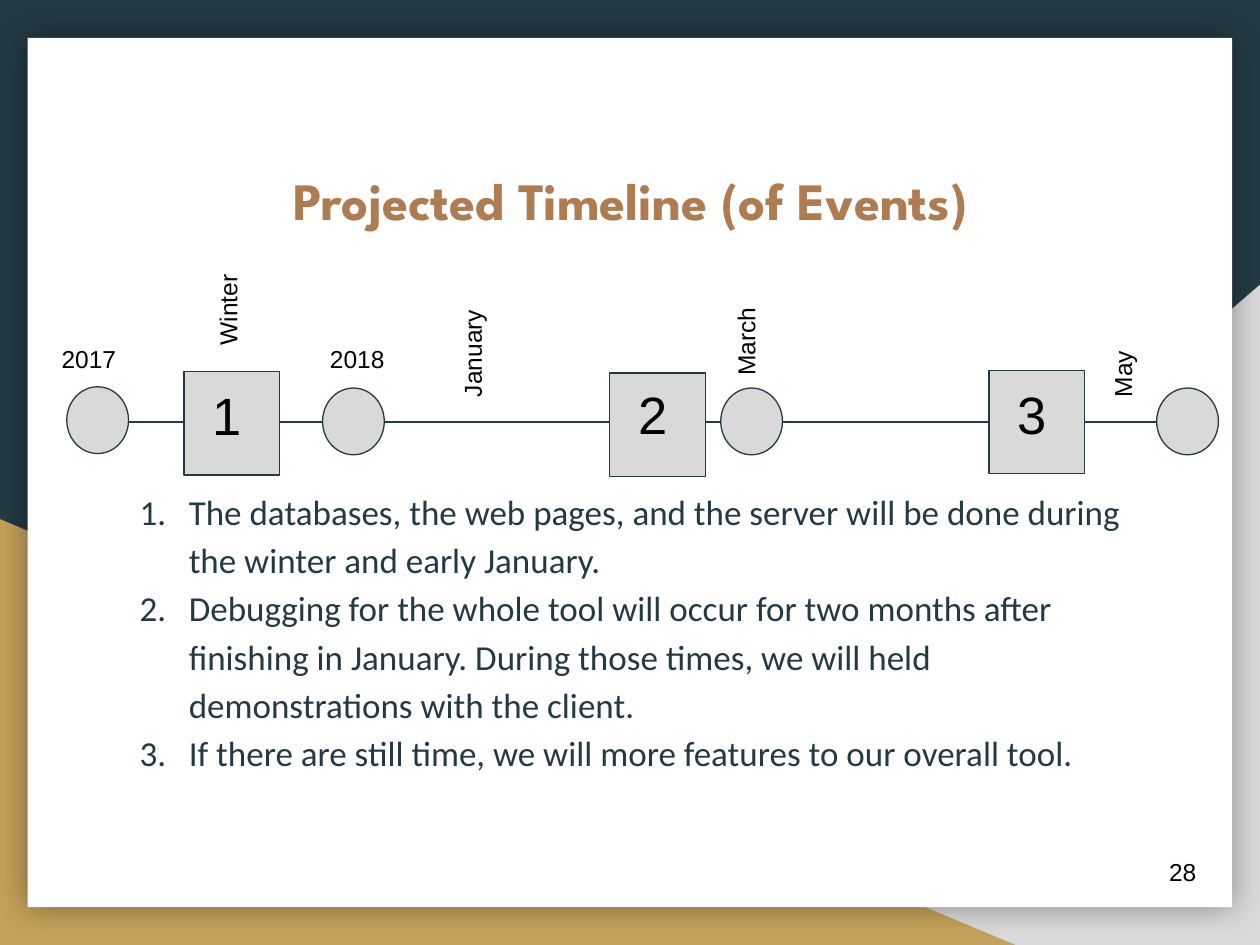
from dataclasses import dataclass

from lxml.etree import SubElement
from pptx import Presentation
from pptx.dml.color import RGBColor
from pptx.enum.shapes import MSO_CONNECTOR, MSO_SHAPE
from pptx.enum.text import MSO_ANCHOR, PP_ALIGN
from pptx.oxml.ns import qn
from pptx.shapes.autoshape import Shape
from pptx.util import Inches, Pt

NAVY, GOLD, GREY = "233A44", "C4A15A", "D9D9D9"
BROWN, WHITE, BLACK = "AF7B51", "FFFFFF", "000000"


@dataclass
class Box:
    left: float
    top: float
    width: float
    height: float

    def lengths(self) -> list[int]:
        return [Inches(side) for side in (self.left, self.top, self.width, self.height)]


@dataclass
class Label:
    text: str
    box: Box
    rotation: int = 0


@dataclass
class Milestone:
    number: str
    left: float
    top: float
    number_top: float


CIRCLES = [(0.53, 3.07), (2.56, 3.08), (5.72, 3.08), (9.18, 3.08)]
MILESTONES = [
    Milestone("1", 1.46, 2.95, 2.94),
    Milestone("2", 4.84, 2.96, 2.93),
    Milestone("3", 7.85, 2.94, 2.93),
]
LABELS = [
    Label("2017", Box(0.39, 2.63, 0.76, 0.43)),
    Label("2018", Box(2.52, 2.63, 0.76, 0.43)),
    Label("Winter", Box(1.23, 2.08, 1.12, 0.4), 270),
    Label("January", Box(3.17, 2.49, 1.12, 0.4), 270),
    Label("March", Box(5.34, 2.32, 1.12, 0.4), 270),
    Label("May", Box(8.33, 2.49, 1.12, 0.4), 270),
]
STEPS = [
    "The databases, the web pages, and the server will be done during the winter "
    "and early January.",
    "Debugging for the whole tool will occur for two months after finishing in January. "
    "During those times, we will held demonstrations with the client.",
    "If there are still time, we will more features to our overall tool.",
]


def color(value: str) -> RGBColor:
    return RGBColor.from_string(value)


def add_filled(shapes, kind: MSO_SHAPE, box: Box, fill: str, outline: str = "") -> Shape:
    shape = shapes.add_shape(kind, *box.lengths())
    shape.shadow.inherit = False
    shape.fill.solid()
    shape.fill.fore_color.rgb = color(fill)
    if outline:
        shape.line.color.rgb = color(outline)
        shape.line.width = Pt(0.75)
    else:
        shape.line.fill.background()
    return shape


def add_text(shapes, paragraphs: list[str], box: Box, size: float, font: str = "Arial",
             fill: str = BLACK) -> Shape:
    text_box = shapes.add_textbox(*box.lengths())
    frame = text_box.text_frame
    frame.word_wrap = True
    frame.margin_left = frame.margin_right = Inches(0.1)
    frame.margin_top = frame.margin_bottom = Inches(0.1)
    frame.text = "\n".join(paragraphs)
    for paragraph in frame.paragraphs:
        paragraph.font.size = Pt(size)
        paragraph.font.name = font
        paragraph.font.color.rgb = color(fill)
    return text_box


def add_glow(shape: Shape) -> None:
    """Give the shape a soft black shadow on all sides."""
    effects = shape._element.spPr.find(qn("a:effectLst"))
    shadow = SubElement(effects, qn("a:outerShdw"), blurRad=str(Pt(18)), dist="0",
                        dir="0", algn="ctr", rotWithShape="0")
    tint = SubElement(shadow, qn("a:srgbClr"), val=BLACK)
    SubElement(tint, qn("a:alpha"), val="40000")


def add_backdrop(slide) -> None:
    slide.background.fill.solid()
    slide.background.fill.fore_color.rgb = color(NAVY)
    right_corner = add_filled(slide.shapes, MSO_SHAPE.RIGHT_TRIANGLE,
                              Box(3.92, 2.26, 6.08, 5.24), GREY)
    right_corner._element.spPr.find(qn("a:xfrm")).set("flipH", "1")
    add_filled(slide.shapes, MSO_SHAPE.RIGHT_TRIANGLE, Box(0, 4.12, 8.06, 3.38), GOLD)
    add_glow(add_filled(slide.shapes, MSO_SHAPE.RECTANGLE, Box(0.22, 0.3, 9.56, 6.9), WHITE))


def add_steps(slide) -> None:
    text_box = add_text(slide.shapes, STEPS, Box(0.9, 3.74, 8.21, 2.31), 20, "Calibri", NAVY)
    paragraphs = text_box.text_frame.paragraphs
    for paragraph in paragraphs:
        paragraph.line_spacing = 1.15
    paragraphs[-1].space_after = Pt(16)
    for paragraph in paragraphs:
        properties = paragraph._p.get_or_add_pPr()
        properties.set("marL", str(Inches(0.5)))
        properties.set("indent", str(Inches(-0.39)))
        number = properties.makeelement(qn("a:buAutoNum"), {"type": "arabicPeriod"})
        bullet_color = properties.makeelement(qn("a:buClr"), {})
        SubElement(bullet_color, qn("a:srgbClr"), val=NAVY)
        defaults = properties.find(qn("a:defRPr"))
        defaults.addprevious(bullet_color)
        defaults.addprevious(number)


def add_timeline(slide) -> None:
    shapes = slide.shapes.add_group_shape().shapes
    axis = shapes.add_connector(MSO_CONNECTOR.STRAIGHT, Inches(0.69), Inches(3.35),
                                Inches(9.47), Inches(3.35))
    axis.line.color.rgb = color(NAVY)
    axis.line.width = Pt(0.75)
    SubElement(axis._element.spPr, qn("a:effectLst"))
    for left, top in CIRCLES:
        add_filled(shapes, MSO_SHAPE.OVAL, Box(left, top, 0.49, 0.53), GREY, NAVY)
    for label in LABELS:
        add_text(shapes, [label.text], label.box, 14).rotation = label.rotation
    for milestone in MILESTONES:
        add_filled(shapes, MSO_SHAPE.RECTANGLE,
                   Box(milestone.left, milestone.top, 0.76, 0.82), GREY, NAVY)
        add_text(shapes, [milestone.number],
                 Box(milestone.left + 0.13, milestone.number_top, 0.49, 0.82), 30)


def main() -> None:
    presentation = Presentation()
    presentation.slide_width = Inches(10)
    presentation.slide_height = Inches(7.5)
    slide = presentation.slides.add_slide(presentation.slide_layouts[6])
    add_backdrop(slide)
    add_steps(slide)
    title = add_text(slide.shapes, ["Projected Timeline (of Events)"],
                     Box(0.9, 1.23, 8.21, 1.39), 30, "League Spartan", BROWN)
    heading = title.text_frame.paragraphs[0]
    heading.alignment = PP_ALIGN.CENTER
    heading.font.bold = True
    page_number = add_text(slide.shapes, ["28"], Box(9.18, 6.63, 0.6, 0.57), 14)
    page_number.text_frame.vertical_anchor = MSO_ANCHOR.MIDDLE
    add_timeline(slide)
    presentation.save("out.pptx")


if __name__ == "__main__":
    main()
